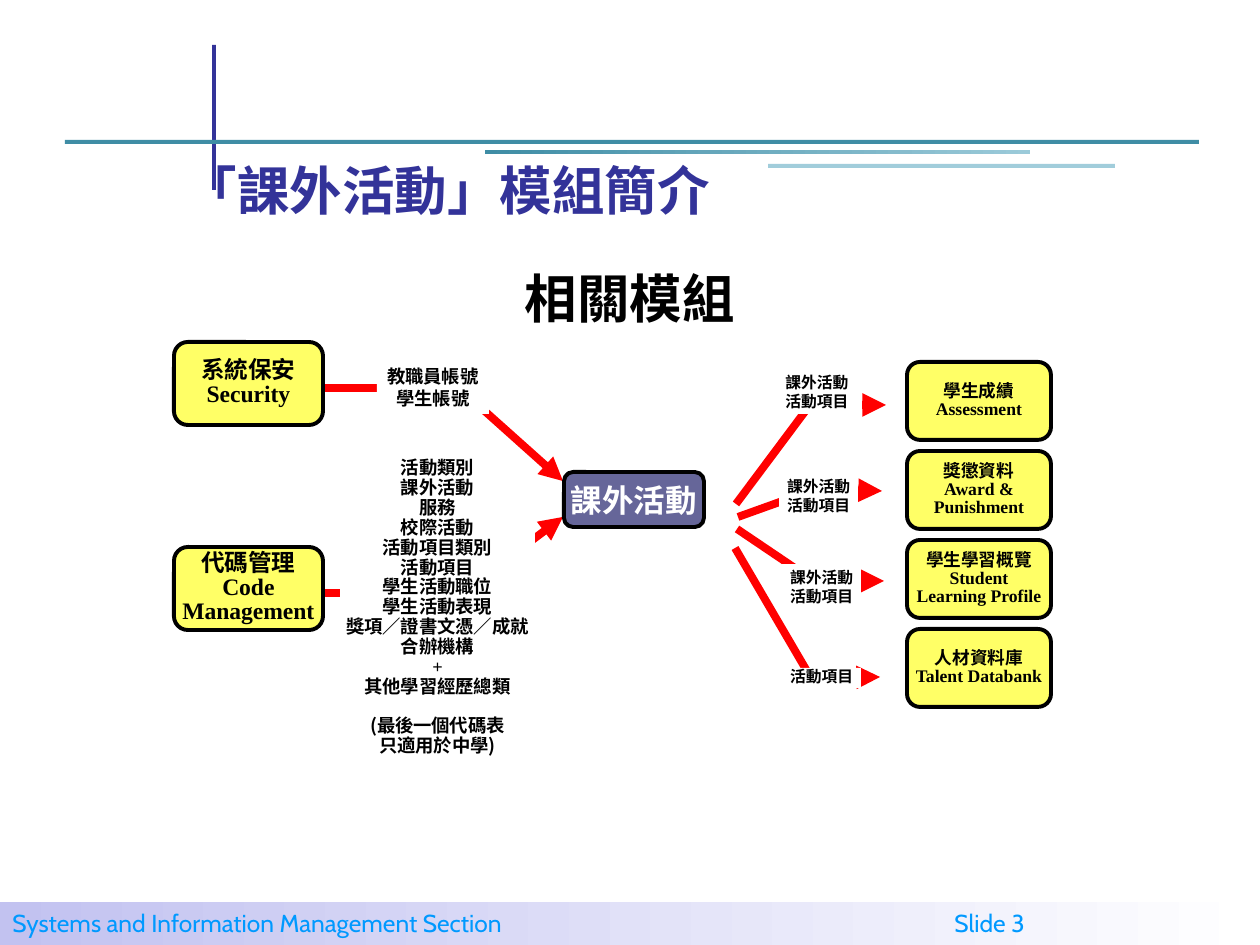
import pptx
import pptx.util
import pptx.dml.color
import pptx.enum.shapes
import pptx.enum.text
import pptx.oxml.ns
import lxml.etree

SCALE = 914400 / 126
SERIF = "Times New Roman"
SANS = "Cabin"
CJK = "Noto Sans CJK SC"
SHAPE = pptx.enum.shapes.MSO_SHAPE
ALIGN = pptx.enum.text.PP_ALIGN
ANCHOR = pptx.enum.text.MSO_ANCHOR


def px(length):
    return pptx.util.Emu(round(length * SCALE))


def color(code):
    return pptx.dml.color.RGBColor.from_string(code)


def add_child(parent, tag, **attributes):
    return lxml.etree.SubElement(parent, pptx.oxml.ns.qn(tag), **attributes)


def add_block(slide, box, fill, preset=SHAPE.RECTANGLE, outline=None):
    block = slide.shapes.add_shape(preset, *map(px, box))
    block.shadow.inherit = False
    if isinstance(fill, tuple):
        block.fill.gradient()
        block.fill.gradient_angle = 0
        for stop, code in zip(block.fill.gradient_stops, fill):
            stop.color.rgb = color(code)
    else:
        block.fill.solid()
        block.fill.fore_color.rgb = color(fill)
    if outline:
        block.line.color.rgb = color(outline)
        block.line.width = pptx.util.Pt(2.25)
    else:
        block.line.fill.background()
    return block


def write(shape, lines, size, code="000000", font=SERIF, bold=True, align=ALIGN.CENTER,
          spacing=1.0, insets=(9, 5), anchor=ANCHOR.TOP, wrap=True):
    frame = shape.text_frame
    frame.word_wrap = wrap
    frame.vertical_anchor = anchor
    frame.margin_left = frame.margin_right = px(insets[0])
    frame.margin_top = frame.margin_bottom = px(insets[1])
    frame.text = "\n".join(lines)
    for paragraph in frame.paragraphs:
        paragraph.alignment = align
        paragraph.line_spacing = spacing
        paragraph.font.size = pptx.util.Pt(size)
        paragraph.font.name = font
        paragraph.font.bold = bold
        paragraph.font.color.rgb = color(code)
    return frame.paragraphs


def add_heading(slide, box, text, **style):
    write(slide.shapes.add_textbox(*map(px, box)), [text], 30, font=SANS, **style)


def add_module(slide, box, lines, size, fill="FFFF66", **style):
    module = add_block(slide, box, fill, SHAPE.ROUNDED_RECTANGLE, "000000")
    write(module, lines, size, anchor=ANCHOR.MIDDLE, wrap=False, **style)


def add_label(slide, box, lines, size, **style):
    return write(add_block(slide, box, "FFFFFF"), lines, size, **style)


def add_flow(slide, start, *bends):
    builder = slide.shapes.build_freeform(*start, scale=SCALE)
    builder.add_line_segments(bends, close=False)
    flow = builder.convert_to_shape()
    flow.shadow.inherit = False
    flow.fill.background()
    flow.line.color.rgb = color("FF0000")
    flow.line.width = pptx.util.Pt(4.5)
    add_child(flow.line._get_or_add_ln(), "a:tailEnd", type="triangle")


def add_frame(slide):
    for box, fill in [
        ((212, 45, 4, 145), "333399"),
        ((65, 140, 1134, 4), "3F8DA5"),
        ((485, 150, 545, 4), ("3F8DA5", "9BCAD9")),
        ((768, 164, 347, 4), "A1CDDB"),
    ]:
        add_block(slide, box, fill)
    footer = add_block(slide, (0, 902, 1260, 43), ("C2C2F0", "FFFFFF"))
    line = footer.text_frame.paragraphs[0]
    line.text = "Systems and Information Management Section\tSlide 3"
    line.alignment = ALIGN.LEFT
    tabs = add_child(line._p.get_or_add_pPr(), "a:tabLst")
    add_child(tabs, "a:tab", pos=str(px(942)), algn="l")
    line.font.size = pptx.util.Pt(14)
    line.font.name = SANS
    line.font.color.rgb = color("0099FF")
    footer.text_frame.vertical_anchor = ANCHOR.TOP


def add_sources(slide):
    add_flow(slide, (321, 593), (462, 593), (563, 517))
    add_module(slide, (174, 547, 149, 83), ["代碼管理", "Code", "Management"], 13.5, spacing=0.85)
    code_tables = [
        "活動類別", "課外活動", "服務", "校際活動", "活動項目類別", "活動項目",
        "學生活動職位", "學生活動表現", "獎項／證書文憑／成就", "合辦機構", "+",
        "其他學習經歷總類", "(最後一個代碼表", "只適用於中學)",
    ]
    entries = add_label(slide, (340, 454, 195, 310), code_tables, 10.5, spacing=0.9, insets=(0, 5))
    for remark in entries[-2:]:
        remark.font.name = CJK
    entries[-2].space_before = pptx.util.Pt(11.4)

    add_flow(slide, (312, 388), (459, 388), (563, 481))
    add_module(slide, (174, 342, 149, 83), ["系統保安", "Security"], 13.5, spacing=0.85)
    add_label(slide, (377, 360, 112, 54), ["教職員帳號", "學生帳號"], 10.5, wrap=False)


def add_targets(slide):
    for route in [
        [(736, 504), (810, 405), (886, 405)],
        [(738, 517), (816, 489), (882, 491)],
        [(737, 529), (814, 581), (884, 581)],
        [(735, 548), (811, 678), (880, 677)],
    ]:
        add_flow(slide, *route)
    shared = ["課外活動", "活動項目"]
    for box in [(772, 369, 90, 45), (779, 473, 79, 45), (782, 564, 79, 45)]:
        add_label(slide, box, shared, 9, insets=(0, 4))
    add_label(slide, (782, 668, 79, 20), shared[1:], 9, spacing=0.7, insets=(0, 4))
    modules = [
        ["學生成績", "Assessment"],
        ["獎懲資料", "Award &", "Punishment"],
        ["學生學習概覽", "Student", "Learning Profile"],
        ["人材資料庫", "Talent Databank"],
    ]
    for row, lines in enumerate(modules):
        add_module(slide, (907, 362 + 89 * row, 144, 78), lines, 10.1, spacing=0.85, insets=(8, 4))


def main():
    deck = pptx.Presentation()
    deck.slide_width, deck.slide_height = px(1260), px(945)
    slide = deck.slides.add_slide(deck.slide_layouts[6])
    add_frame(slide)
    add_heading(slide, (176, 261, 908, 73), "相關模組")
    add_sources(slide)
    add_heading(slide, (176, 122, 908, 105), "「課外活動」模組簡介",
                code="333399", align=ALIGN.LEFT, spacing=1.5)
    add_module(slide, (564, 472, 140, 55), ["課外活動"], 18, fill="666699", code="FFFFFF")
    add_targets(slide)
    deck.save("out.pptx")


if __name__ == "__main__":
    main()
